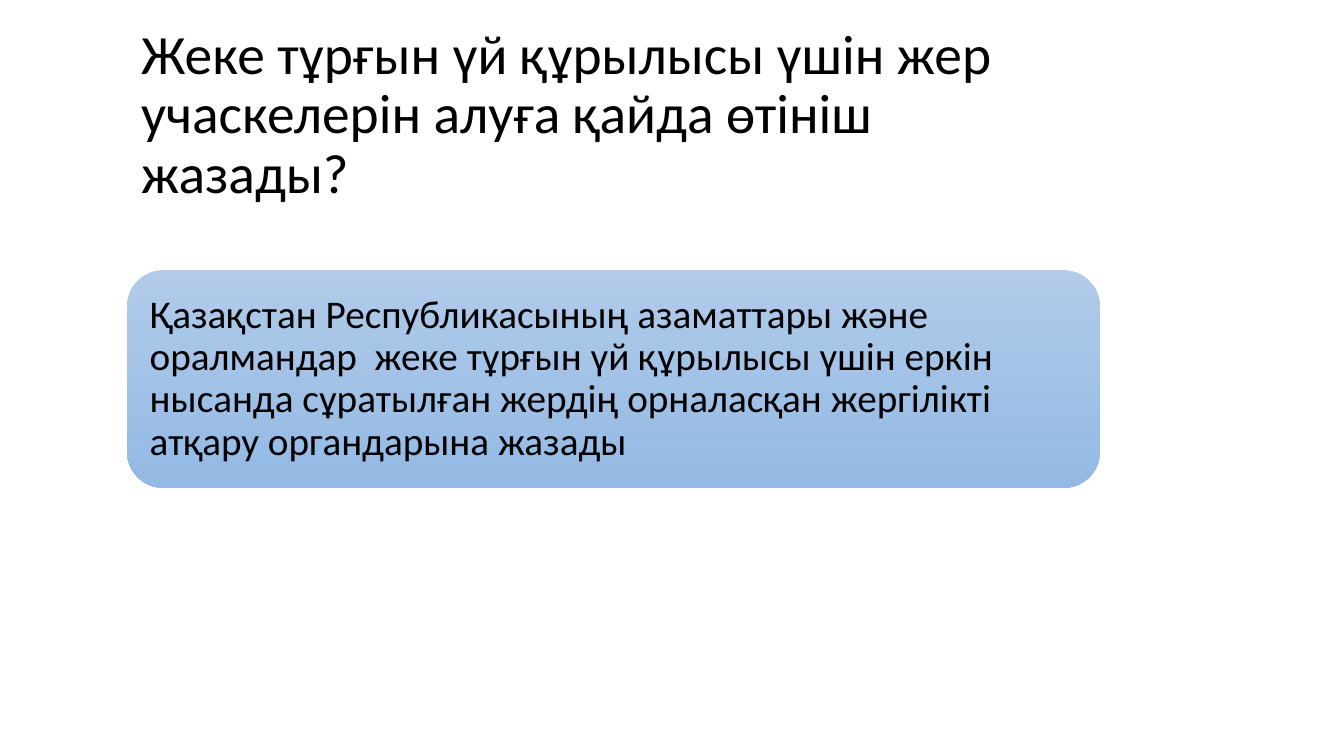
"""Builds a slide with a question and its answer on a rounded panel."""
from pptx import Presentation
from pptx.dml.color import RGBColor
from pptx.enum.shapes import MSO_SHAPE
from pptx.enum.text import MSO_ANCHOR, MSO_AUTO_SIZE, PP_ALIGN
from pptx.util import Inches, Pt

QUESTION = "Жеке тұрғын үй құрылысы үшін жер учаскелерін алуға қайда өтініш жазады?"
ANSWER = (
    "Қазақстан Республикасының азаматтары және оралмандар  жеке тұрғын үй "
    "құрылысы үшін еркін нысанда сұратылған жердің орналасқан жергілікті "
    "атқару органдарына жазады"
)
QUESTION_BOX = (1.3, 0.2, 9.58, 1.9)
ANSWER_BOX = (1.26, 2.68, 9.65, 2.16)
PANEL_GRADIENT = ("B1CBE9", "93B9E4")
TEXT_COLOR = "000000"


def color(code):
    return RGBColor.from_string(code)


def write(shape, wording, size, inset_x, inset_y):
    frame = shape.text_frame
    frame.text = wording
    frame.word_wrap = True
    frame.auto_size = MSO_AUTO_SIZE.NONE
    frame.vertical_anchor = MSO_ANCHOR.MIDDLE
    frame.margin_left = frame.margin_right = Inches(inset_x)
    frame.margin_top = frame.margin_bottom = Inches(inset_y)
    paragraph = frame.paragraphs[0]
    paragraph.alignment = PP_ALIGN.LEFT
    paragraph.line_spacing = 0.9
    paragraph.space_before = Pt(0)
    paragraph.font.name = "Calibri"
    paragraph.font.size = Pt(size)
    paragraph.font.color.rgb = color(TEXT_COLOR)


def main():
    deck = Presentation()
    deck.slide_width, deck.slide_height = Inches(13.33), Inches(7.5)
    slide = deck.slides.add_slide(deck.slide_layouts[5])

    question = slide.shapes.title
    question.left, question.top, question.width, question.height = map(Inches, QUESTION_BOX)
    write(question, QUESTION, 39.6, 0.1, 0.05)

    answer = slide.shapes.add_shape(MSO_SHAPE.ROUNDED_RECTANGLE, *map(Inches, ANSWER_BOX))
    answer.shadow.inherit = False
    answer.line.fill.background()
    answer.fill.gradient()
    answer.fill.gradient_angle = 270
    for stop, code in zip(answer.fill.gradient_stops, PANEL_GRADIENT):
        stop.color.rgb = color(code)
    write(answer, ANSWER, 28, 0.12, 0.12)

    deck.save("out.pptx")


if __name__ == "__main__":
    main()
